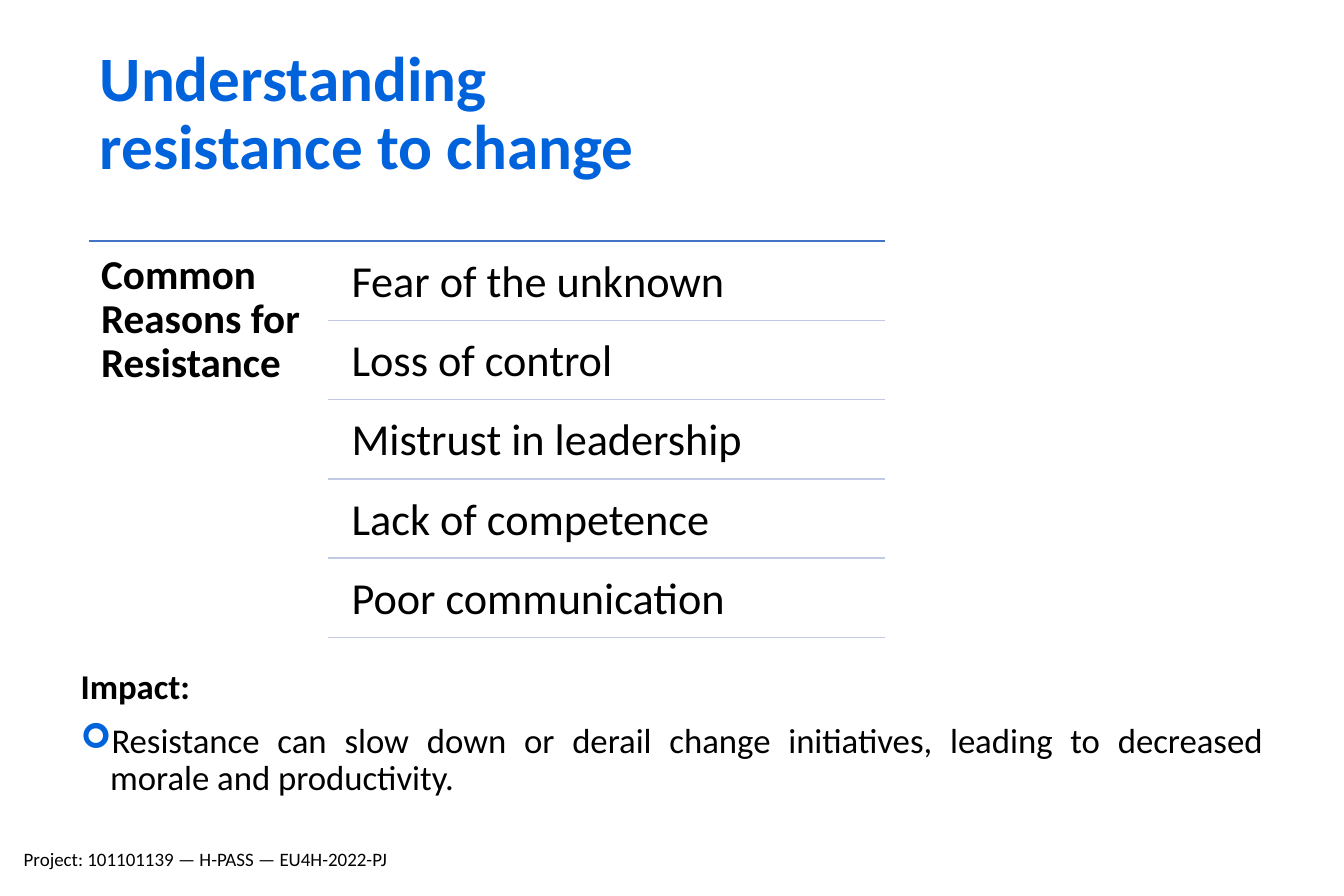
from dataclasses import dataclass

from lxml.etree import SubElement
from pptx import Presentation
from pptx.dml.color import RGBColor
from pptx.enum.shapes import MSO_CONNECTOR as Connector
from pptx.enum.text import MSO_ANCHOR as Anchor, PP_ALIGN as Align
from pptx.oxml.ns import qn
from pptx.util import Cm, Pt


@dataclass(frozen=True)
class Theme:
    font: str = "Calibri"
    accent: str = "0063DC"
    ink: str = "000000"
    top_rule: str = "4472C4"
    row_rule: str = "C1C9E4"
    title: float = 40
    reason: float = 28
    heading: float = 26
    body: float = 22
    footer: float = 12
    rule: float = 1


@dataclass(frozen=True)
class Area:
    """Left, top, width and height in centimetres."""
    left: float
    top: float
    width: float
    height: float


THEME = Theme()
REASONS = (
    "Fear of the unknown",
    "Loss of control",
    "Mistrust in leadership",
    "Lack of competence",
    "Poor communication",
)
LIST_LEFT, LIST_TOP, LIST_RIGHT = 1.98, 5.38, 19.76
ROW_LEFT, ROW_PITCH = 7.32, 1.77
BULLET_INDENT = 0.66


def add_box(page, area: Area, inset_x: float = 0.25, inset_y: float = 0.13):
    box = page.shapes.add_textbox(
        Cm(area.left), Cm(area.top), Cm(area.width), Cm(area.height))
    frame = box.text_frame
    frame.word_wrap = True
    frame.vertical_anchor = Anchor.TOP
    frame.margin_left = frame.margin_right = Cm(inset_x)
    frame.margin_top = frame.margin_bottom = Cm(inset_y)
    return frame


def add_bullet(para, symbol: str, color: str, indent: float) -> None:
    props = para._p.get_or_add_pPr()
    props.set("marL", str(Cm(indent)))
    props.set("indent", str(-Cm(indent)))
    bullet_color = SubElement(props, qn("a:buClr"))
    SubElement(bullet_color, qn("a:srgbClr")).set("val", color)
    SubElement(props, qn("a:buFont")).set("typeface", "Wingdings")
    SubElement(props, qn("a:buChar")).set("char", symbol)


def write(para, text: str, *, size: float, color: str = THEME.ink,
          bold: bool = False, align: Align = Align.LEFT,
          spacing: float = 0.9, before: float = 0) -> None:
    para.alignment = align
    para.line_spacing = spacing
    para.space_before = Pt(before)
    span = para.add_run()
    span.text = text
    span.font.name = THEME.font
    span.font.size = Pt(size)
    span.font.bold = bold
    span.font.color.rgb = RGBColor.from_string(color)


def add_rule(page, left: float, top: float, color: str) -> None:
    rule = page.shapes.add_connector(
        Connector.STRAIGHT, Cm(left), Cm(top), Cm(LIST_RIGHT), Cm(top))
    rule.line.color.rgb = RGBColor.from_string(color)
    rule.line.width = Pt(THEME.rule)
    SubElement(rule._element.spPr, qn("a:effectLst"))


def add_reason(page, index: int, text: str) -> None:
    top = LIST_TOP + index * ROW_PITCH
    frame = add_box(page, Area(7.54, top + 0.09, 12.22, 1.68), 0.31, 0.31)
    write(frame.paragraphs[0], text, size=THEME.reason)
    add_rule(page, ROW_LEFT, top + ROW_PITCH, THEME.row_rule)


def main() -> None:
    deck = Presentation()
    deck.slide_width, deck.slide_height = Cm(30), Cm(20)
    page = deck.slides.add_slide(deck.slide_layouts[6])

    # Title and footer
    title = add_box(page, Area(1.98, 0.91, 14.83, 3.1))
    write(title.paragraphs[0], "Understanding resistance to change",
          size=THEME.title, color=THEME.accent, bold=True, align=Align.JUSTIFY)
    footer = add_box(page, Area(0.28, 18.8, 9.22, 0.69))
    write(footer.paragraphs[0], "Project: 101101139 — H-PASS — EU4H-2022-PJ",
          size=THEME.footer, spacing=1.0)

    # Ruled list of reasons
    add_rule(page, LIST_LEFT, LIST_TOP, THEME.top_rule)
    heading = add_box(page, Area(LIST_LEFT, LIST_TOP, 5.33, 8.94), 0.28, 0.28)
    write(heading.paragraphs[0], "Common Reasons for Resistance",
          size=THEME.heading, bold=True)
    for index, reason in enumerate(REASONS):
        add_reason(page, index, reason)

    # Impact
    impact = add_box(page, Area(1.55, 14.81, 26.9, 3.5))
    write(impact.paragraphs[0], "Impact:",
          size=THEME.body, bold=True, align=Align.JUSTIFY)
    effect = impact.add_paragraph()
    add_bullet(effect, "➢", THEME.accent, BULLET_INDENT)
    write(effect, "Resistance can slow down or derail change initiatives, "
          "leading to decreased morale and productivity.",
          size=THEME.body, align=Align.JUSTIFY, before=10.5)

    deck.save("out.pptx")


if __name__ == "__main__":
    main()
